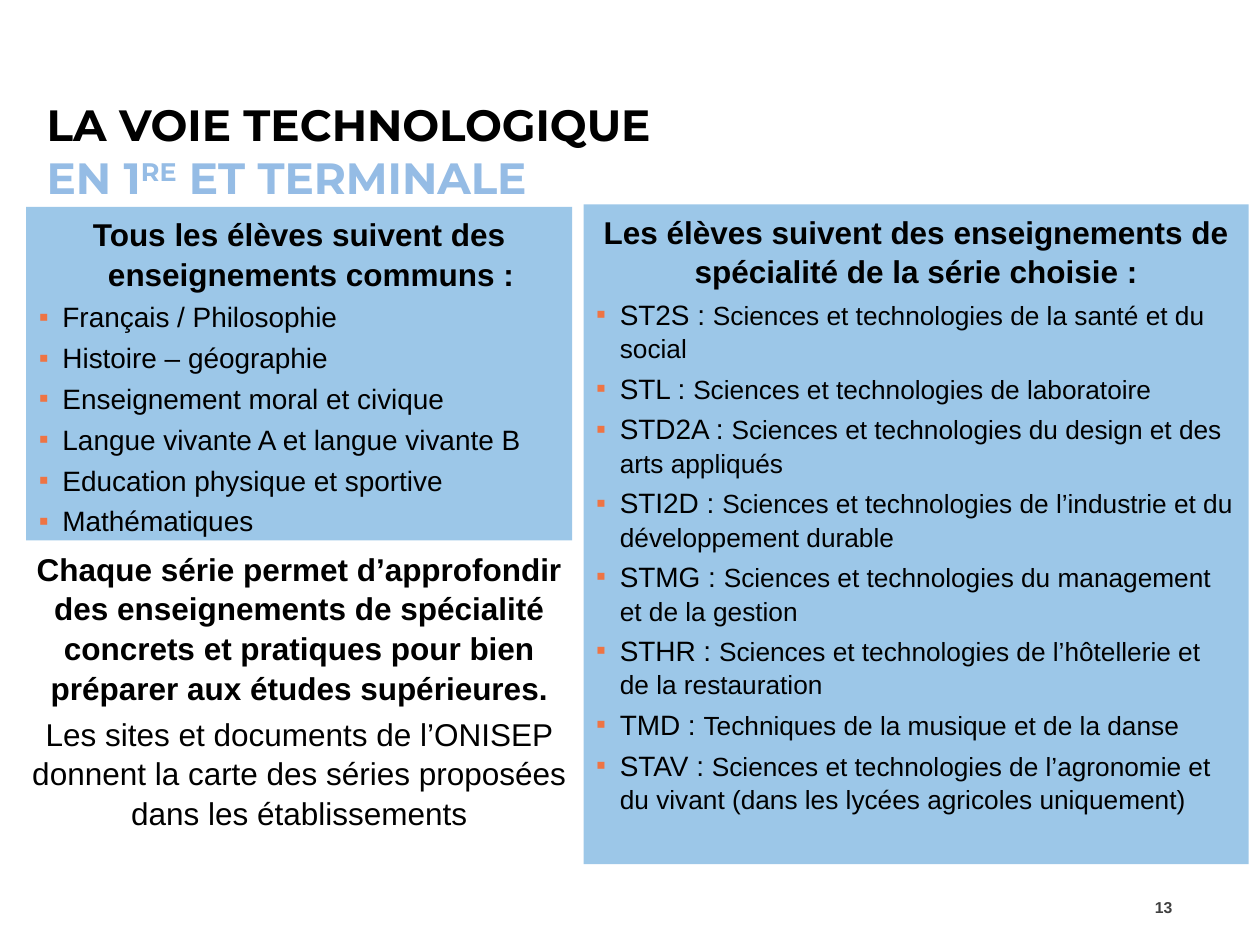
from lxml import etree
from pptx import Presentation
from pptx import util as u
from pptx.dml.color import RGBColor
from pptx.enum import text
from pptx.oxml.ns import qn

COLORS = {
    "ink": "000000",
    "accent": "95BCE5",
    "panel": "9CC7E8",
    "bullet": "EE7444",
    "number": "404040",
}
HANGING = 13.5

COMMON_COURSES = [
    "Français / Philosophie",
    "Histoire – géographie",
    "Enseignement moral et civique",
    "Langue vivante A et langue vivante B",
    "Education physique et sportive",
    "Mathématiques",
]
SERIES = [
    ("ST2S", "Sciences et technologies de la santé et du social"),
    ("STL", "Sciences et technologies de laboratoire"),
    ("STD2A", "Sciences et technologies du design et des arts appliqués"),
    ("STI2D", "Sciences et technologies de l’industrie et du développement durable"),
    ("STMG", "Sciences et technologies du management et de la gestion"),
    ("STHR", "Sciences et technologies de l’hôtellerie et de la restauration"),
    ("TMD", "Techniques de la musique et de la danse"),
    ("STAV", "Sciences et technologies de l’agronomie et du vivant "
             "(dans les lycées agricoles uniquement)"),
]


class Deck:
    body_font = "Arial"
    title_font = "Montserrat"

    def __init__(self, width, height):
        self.prs = Presentation()
        self.prs.slide_width, self.prs.slide_height = u.Pt(width), u.Pt(height)
        self.slide = self.prs.slides.add_slide(self.prs.slide_layouts[3])

    def place(self, part, box):
        part.left, part.top, part.width, part.height = map(u.Pt, box)

    def frame(self, part, anchor):
        frame = part.text_frame
        frame.word_wrap = True
        frame.auto_size = text.MSO_AUTO_SIZE.NONE
        frame.vertical_anchor = anchor
        return frame

    def run(self, paragraph, words, size, bold=False, color="ink", font=None):
        run = paragraph.add_run()
        run.text = words
        run.font.name = font or self.body_font
        run.font.size = u.Pt(size)
        run.font.bold = bold
        run.font.color.rgb = RGBColor.from_string(COLORS[color])
        return run

    def paragraph(self, frame, runs, align, first=False, bullet=False, hanging=0):
        paragraph = frame.paragraphs[0] if first else frame.add_paragraph()
        properties = paragraph._p.get_or_add_pPr()
        properties.set("marL", str(u.Pt(hanging)))
        properties.set("indent", str(-u.Pt(hanging)))
        if bullet:
            paragraph.level = 1
            tint = etree.SubElement(properties, qn("a:buClr"))
            etree.SubElement(tint, qn("a:srgbClr"), val=COLORS["bullet"])
            etree.SubElement(properties, qn("a:buFont"), typeface=self.body_font)
            etree.SubElement(properties, qn("a:buChar"), char="▪")
        else:
            etree.SubElement(properties, qn("a:buNone"))
        paragraph.alignment = align
        paragraph.line_spacing = 1.05
        paragraph.space_before = u.Pt(0 if first else runs[0][1] * 0.2)
        for run in runs:
            self.run(paragraph, *run)

    def title(self, box, first_line, second_line):
        title = self.slide.shapes.title
        self.place(title, box)
        paragraph = self.frame(title, text.MSO_ANCHOR.MIDDLE).paragraphs[0]
        paragraph.alignment = text.PP_ALIGN.LEFT
        self.run(paragraph, first_line, 25, True, "ink", self.title_font)
        paragraph.add_line_break()
        for words, raised in second_line:
            run = self.run(paragraph, words, 25, True, "accent", self.title_font)
            if raised:
                run.font._element.set("baseline", "30000")

    def panel(self, index, box, heading, items, heading_hanging=0):
        panel = self.slide.placeholders[index]
        self.place(panel, box)
        panel.fill.solid()
        panel.fill.fore_color.rgb = RGBColor.from_string(COLORS["panel"])
        frame = self.frame(panel, text.MSO_ANCHOR.TOP)
        self.paragraph(frame, [(heading, 18, True)], text.PP_ALIGN.CENTER,
                       first=True, hanging=heading_hanging)
        for runs in items:
            self.paragraph(frame, runs, text.PP_ALIGN.LEFT,
                           bullet=True, hanging=HANGING)

    def note(self, box, paragraphs, align, anchor=text.MSO_ANCHOR.TOP):
        note = self.slide.shapes.add_textbox(*map(u.Pt, box))
        frame = self.frame(note, anchor)
        for position, run in enumerate(paragraphs):
            self.paragraph(frame, [run], align, first=position == 0)


def main():
    deck = Deck(720, 540)
    deck.title((19.5, 28, 692, 116), "LA VOIE TECHNOLOGIQUE",
               [("EN 1", False), ("RE", True), (" ET TERMINALE", False)])
    deck.panel(1, (15, 118.25, 312, 190.5),
               "Tous les élèves suivent des enseignements communs :",
               [[(course, 16)] for course in COMMON_COURSES],
               heading_hanging=HANGING)
    deck.panel(2, (333.5, 116.75, 380, 377),
               "Les élèves suivent des enseignements de spécialité de la série choisie :",
               [[(f"{code} : ", 16), (meaning, 15)] for code, meaning in SERIES])
    deck.note((8.5, 309.5, 325, 164),
              [("Chaque série permet d’approfondir des enseignements de spécialité "
                "concrets et pratiques pour bien préparer aux études supérieures.",
                18, True),
               ("Les sites et documents de l’ONISEP donnent la carte des séries "
                "proposées dans les établissements", 18)],
              text.PP_ALIGN.CENTER)
    deck.note((641.5, 503.5, 35.5, 29), [("13", 9, True, "number")],
              text.PP_ALIGN.RIGHT, text.MSO_ANCHOR.MIDDLE)
    deck.prs.save("out.pptx")


if __name__ == "__main__":
    main()
